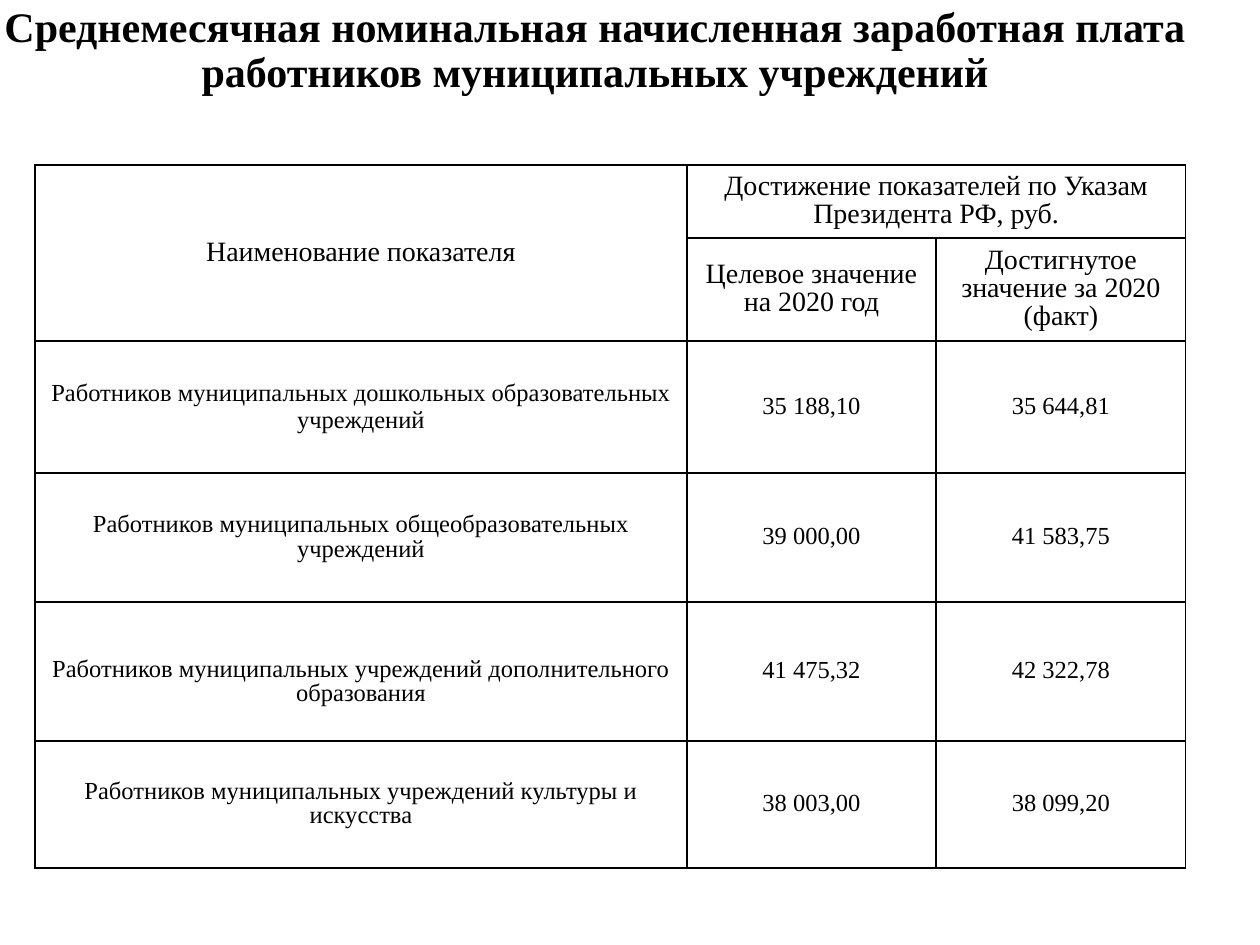
"""Build a slide with a table of average monthly wages of municipal workers."""
from lxml.etree import SubElement
from pptx import Presentation
from pptx.dml.color import RGBColor
from pptx.enum.text import MSO_ANCHOR, PP_ALIGN
from pptx.oxml.ns import qn
from pptx.util import Pt

BLACK = "000000"
COLUMN_WIDTHS = [372.5, 142.5, 142.5]
ROW_HEIGHTS = [41.7, 58.9, 75.5, 73.7, 79.4, 72.5]
ROWS = [
    ["Наименование показателя", "Достижение показателей по Указам Президента РФ, руб.", ""],
    ["", "Целевое значение на 2020 год", "Достигнутое значение за 2020 (факт)"],
    ["Работников муниципальных дошкольных образовательных учреждений", "35 188,10", "35 644,81"],
    ["Работников муниципальных общеобразовательных учреждений", "39 000,00", "41 583,75"],
    ["Работников муниципальных учреждений дополнительного образования", "41 475,32", "42 322,78"],
    ["Работников муниципальных учреждений культуры и искусства", "38 003,00", "38 099,20"],
]


def write_text(text_frame, text, size, bold=False, line_spacing=0.9):
    paragraph = text_frame.paragraphs[0]
    paragraph.alignment = PP_ALIGN.CENTER
    paragraph.line_spacing = line_spacing
    run = paragraph.add_run()
    run.text = text
    run.font.name = "Times New Roman"
    run.font.size = Pt(size)
    run.font.bold = bold
    run.font.color.rgb = RGBColor.from_string(BLACK)


def add_borders(cell):
    properties = cell._tc.get_or_add_tcPr()
    for side in ("a:lnL", "a:lnR", "a:lnT", "a:lnB"):
        line = SubElement(properties, qn(side), w=str(Pt(1)))
        fill = SubElement(line, qn("a:solidFill"))
        SubElement(fill, qn("a:srgbClr"), val=BLACK)


presentation = Presentation()
presentation.slide_width = Pt(720)
presentation.slide_height = Pt(540)
slide = presentation.slides.add_slide(presentation.slide_layouts[6])

table = slide.shapes.add_table(
    len(ROWS), len(COLUMN_WIDTHS), Pt(20), Pt(94.3),
    Pt(sum(COLUMN_WIDTHS)), Pt(sum(ROW_HEIGHTS)),
).table
table.first_row = False
table.horz_banding = False
for column, width in zip(table.columns, COLUMN_WIDTHS):
    column.width = Pt(width)
for row, height in zip(table.rows, ROW_HEIGHTS):
    row.height = Pt(height)
table.cell(0, 0).merge(table.cell(1, 0))
table.cell(0, 1).merge(table.cell(0, 2))

for row_index, texts in enumerate(ROWS):
    for column_index, text in enumerate(texts):
        cell = table.cell(row_index, column_index)
        cell.vertical_anchor = MSO_ANCHOR.MIDDLE
        add_borders(cell)
        cell.fill.background()
        if text:
            size = 16 if row_index < 2 else 14
            spacing = 1 if (row_index, column_index) == (2, 0) else 0.9
            write_text(cell.text_frame, text, size, line_spacing=spacing)
table.cell(4, 0).margin_top = Pt(16)

title = slide.shapes.add_textbox(Pt(-20), Pt(0), Pt(720), Pt(60))
title.text_frame.word_wrap = True
write_text(
    title.text_frame,
    "Среднемесячная номинальная начисленная заработная плата работников муниципальных учреждений",
    24, bold=True,
)

presentation.save("out.pptx")
